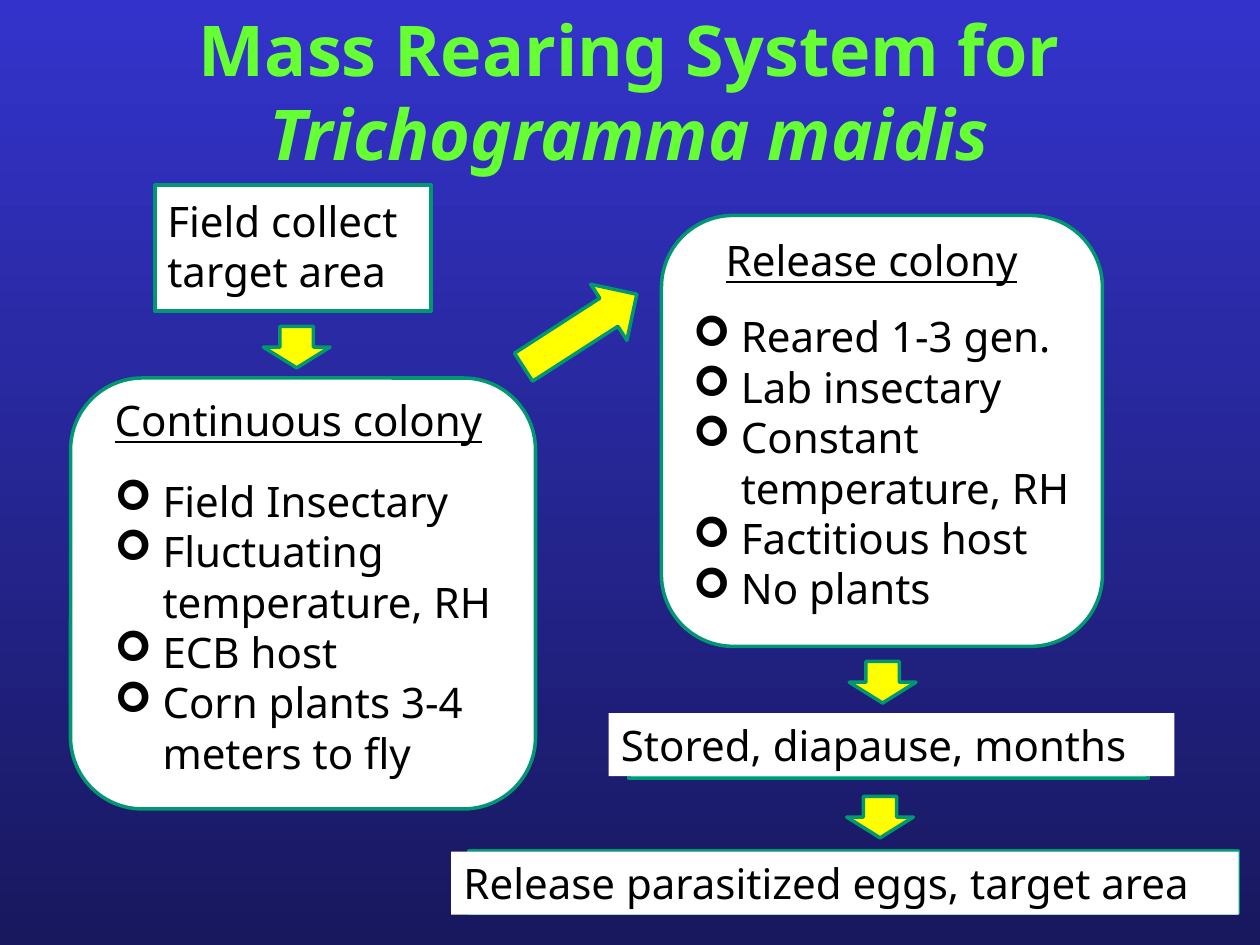
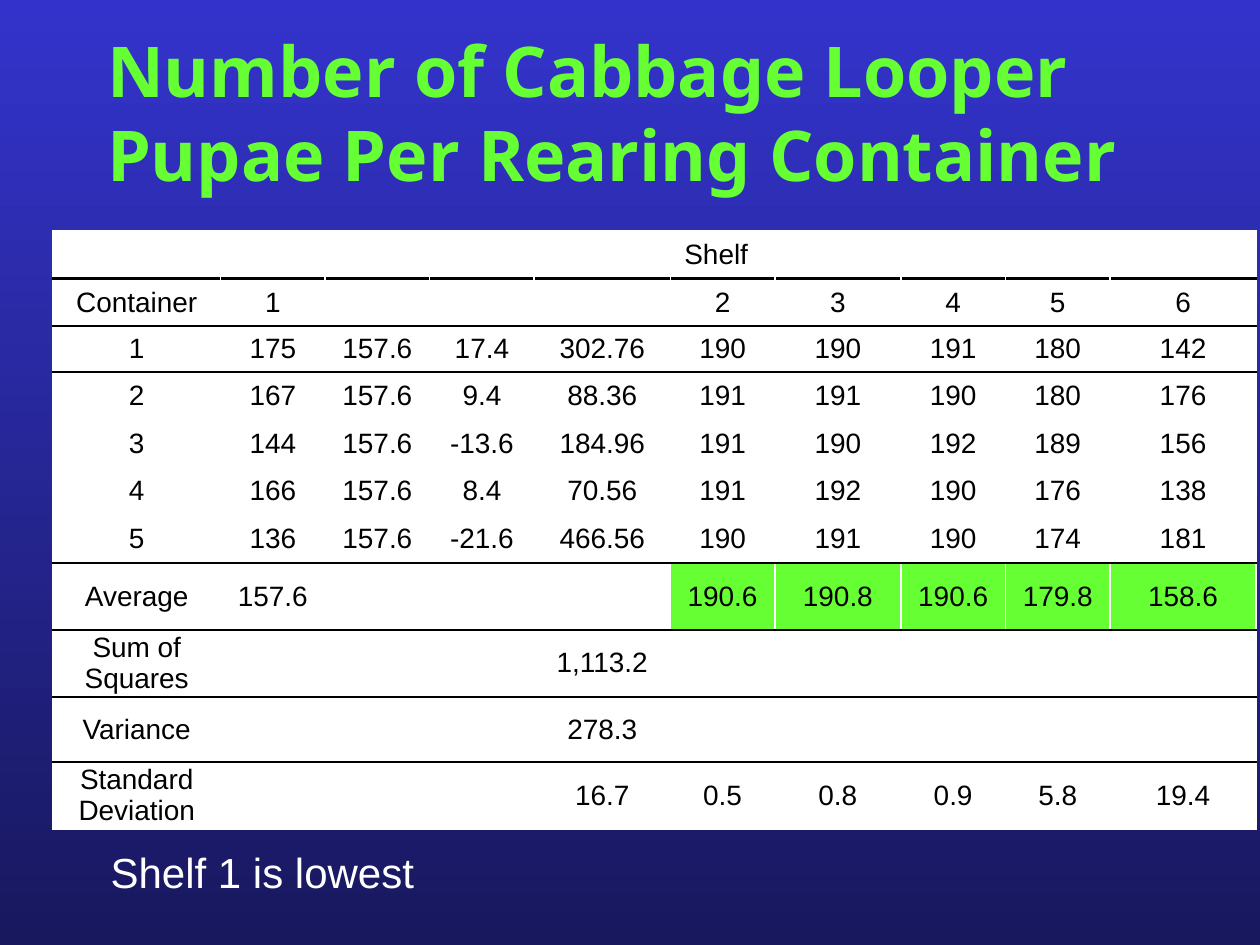
"""Build two slides on mass rearing of insects for biological control."""
from dataclasses import dataclass

from lxml import etree
from pptx import Presentation
from pptx import util as u
from pptx.dml.color import RGBColor
from pptx.enum import shapes, text
from pptx.oxml.ns import qn


@dataclass(frozen=True)
class Theme:
    """Colours, fonts and type sizes shared by the slides."""
    sky: str = "3333CC"
    night: str = "18185E"
    lime: str = "66FF33"
    white: str = "FFFFFF"
    black: str = "000000"
    yellow: str = "FFFF00"
    teal: str = "00CC99"
    outline: str = "009771"
    display: str = "Noto Sans"
    plain: str = "Arial"
    title_size: int = 40
    body_size: int = 24
    table_size: int = 16
    leading: float = 1.2


THEME = Theme()
SHAPE = shapes.MSO_SHAPE
ALIGN = text.PP_ALIGN

COLUMN_WIDTHS = [1.33, 0.83, 0.83, 0.83, 1.08, 0.83, 1, 0.83, 0.83, 0.83]
ROW_HEIGHTS = [0.38, 0.38, 0.36] + [0.38] * 4 + [0.53, 0.53, 0.52, 0.53]
RULED_ROWS = {0, 1, 2, 6, 7, 8, 9}
AVERAGE_ROW, FIRST_UPPER_SHELF = 7, 5
SHELF_ROWS = [
    ["Shelf"] + [""] * 9,
    ["Container", "1", "", "", "", "2", "3", "4", "5", "6"],
    ["1", "175", "157.6", "17.4", "302.76", "190", "190", "191", "180", "142"],
    ["2", "167", "157.6", "9.4", "88.36", "191", "191", "190", "180", "176"],
    ["3", "144", "157.6", "-13.6", "184.96", "191", "190", "192", "189", "156"],
    ["4", "166", "157.6", "8.4", "70.56", "191", "192", "190", "176", "138"],
    ["5", "136", "157.6", "-21.6", "466.56", "190", "191", "190", "174", "181"],
    ["Average", "157.6", "", "", "", "190.6", "190.8", "190.6", "179.8", "158.6"],
    ["Sum of Squares", "", "", "", "1,113.2", "", "", "", "", ""],
    ["Variance", "", "", "", "278.3", "", "", "", "", ""],
    ["Standard Deviation", "", "", "", "16.7", "0.5", "0.8", "0.9", "5.8", "19.4"],
]


def rgb(colour):
    """Turn a hex string into a colour."""
    return RGBColor.from_string(colour)


def place(item, box):
    """Move and size an item to left, top, width, height in inches."""
    item.left, item.top, item.width, item.height = map(u.Inches, box)


def style_runs(paragraph, size, colour, font=THEME.display, **flags):
    """Format every run of a paragraph."""
    for run in paragraph.runs:
        run.font.size = u.Pt(size)
        run.font.name = font
        run.font.color.rgb = rgb(colour)
        for flag, value in flags.items():
            setattr(run.font, flag, value)


def set_leading(paragraph, size):
    """Give a paragraph a fixed line pitch in proportion to its type."""
    paragraph.line_spacing = u.Pt(size * THEME.leading)


def prepare_frame(frame):
    """Make a text frame wrap from its top without resizing."""
    frame.word_wrap = True
    frame.auto_size = text.MSO_AUTO_SIZE.NONE
    frame.vertical_anchor = text.MSO_ANCHOR.TOP


def paint_background(master):
    """Fill the master with the vertical blue gradient."""
    fill = master.background.fill
    fill.gradient()
    fill.gradient_angle = 270
    for stop, colour in zip(fill.gradient_stops, (THEME.sky, THEME.night)):
        stop.color.rgb = rgb(colour)


def set_title(slide, box, wording, align, species=""):
    """Write the slide title, with an optional species name in italics."""
    title = slide.shapes.title
    place(title, box)
    prepare_frame(title.text_frame)
    heading = title.text_frame.paragraphs[0]
    heading.text = wording
    heading.alignment = align
    if species:
        heading.add_run().text = species
    set_leading(heading, THEME.title_size)
    style_runs(heading, THEME.title_size, THEME.lime, bold=True)
    if species:
        heading.runs[-1].font.italic = True


def add_block(slide, kind, box, fill, outlined=True, rotation=0):
    """Draw a preset shape with a flat fill."""
    block = slide.shapes.add_shape(kind, *map(u.Inches, box))
    block.shadow.inherit = False
    block.rotation = rotation
    block.fill.solid()
    block.fill.fore_color.rgb = rgb(fill)
    if outlined:
        block.line.color.rgb = rgb(THEME.outline)
        block.line.width = u.Pt(2)
    else:
        block.line.fill.background()
    return block


def write_label(label, wording, colour=THEME.black, font=THEME.display):
    """Write left-aligned body text in a shape or text box."""
    prepare_frame(label.text_frame)
    line = label.text_frame.paragraphs[0]
    line.text = wording
    line.alignment = ALIGN.LEFT
    set_leading(line, THEME.body_size)
    style_runs(line, THEME.body_size, colour, font)


def add_text(slide, box, wording, **style):
    """Add a text box holding one label."""
    write_label(slide.shapes.add_textbox(*map(u.Inches, box)), wording, **style)


def add_banner(slide, frame_box, label_box, wording):
    """Add a white label over an outlined frame."""
    add_block(slide, SHAPE.RECTANGLE, frame_box, THEME.teal)
    write_label(add_block(slide, SHAPE.RECTANGLE, label_box, THEME.white, outlined=False), wording)


def set_marker(paragraph, indent, hanging=0, marker=""):
    """Set the indent of a paragraph and its bullet, if any."""
    properties = paragraph._p.get_or_add_pPr()
    properties.set("marL", str(u.Inches(indent)))
    properties.set("indent", str(-u.Inches(hanging)))
    if marker:
        etree.SubElement(properties, qn("a:buFont"), typeface="Wingdings")
        etree.SubElement(properties, qn("a:buChar"), char=marker)
    else:
        etree.SubElement(properties, qn("a:buNone"))


def add_colony(slide, body, panel_box, body_box, heading, traits, gap, heading_indent=0):
    """Draw a rounded panel and list the traits of a colony on it."""
    add_block(slide, SHAPE.ROUNDED_RECTANGLE, panel_box, THEME.white)
    body.element.getparent().append(body.element)
    place(body, body_box)
    frame = body.text_frame
    prepare_frame(frame)
    frame.text = "\n".join([heading] + traits)
    for number, line in enumerate(frame.paragraphs):
        if number:
            set_marker(line, 0.38, 0.38, "➢")
        else:
            set_marker(line, heading_indent)
        line.space_before = u.Pt(gap if number == 1 else 0)
        set_leading(line, THEME.body_size)
        style_runs(line, THEME.body_size, THEME.black, underline=number == 0)


def set_borders(cell, top, bottom):
    """Draw white sides and the given top and bottom cell borders."""
    properties = cell._tc.get_or_add_tcPr()
    sides = {"L": THEME.white, "R": THEME.white, "T": top, "B": bottom}
    for order, (side, colour) in enumerate(sides.items()):
        width = u.Pt(1.5 if colour == THEME.black else 1)
        border = etree.Element(qn(f"a:ln{side}"), w=str(width))
        fill = etree.SubElement(border, qn("a:solidFill"))
        etree.SubElement(fill, qn("a:srgbClr"), val=colour)
        properties.insert(order, border)


def rule_colour(row):
    """Return the colour of the line under a row."""
    return THEME.black if row in RULED_ROWS else THEME.white


def fill_cell(cell, wording, row, column):
    """Write and format one cell of the shelf table."""
    cell.text = wording
    cell.vertical_anchor = text.MSO_ANCHOR.MIDDLE
    cell.margin_left = cell.margin_right = u.Inches(0.07)
    cell.margin_top = cell.margin_bottom = 0
    entry = cell.text_frame.paragraphs[0]
    entry.alignment = ALIGN.CENTER
    style_runs(entry, THEME.table_size, THEME.black, THEME.plain)
    highlighted = row == AVERAGE_ROW and column >= FIRST_UPPER_SHELF
    cell.fill.solid()
    cell.fill.fore_color.rgb = rgb(THEME.lime if highlighted else THEME.white)
    set_borders(cell, rule_colour(row - 1), rule_colour(row))


def add_shelf_table(slide):
    """Add the table of pupae per container and shelf."""
    frame = slide.shapes.add_table(len(ROW_HEIGHTS), len(COLUMN_WIDTHS),
                                   *map(u.Inches, (0.42, 1.83, 9.25, 4.74)))
    shelves = frame.table
    shelves.first_row = shelves.horz_banding = False
    for column, width in zip(shelves.columns, COLUMN_WIDTHS):
        column.width = u.Inches(width)
    for row, height in zip(shelves.rows, ROW_HEIGHTS):
        row.height = u.Inches(height)
    for row, entries in enumerate(SHELF_ROWS):
        for column, wording in enumerate(entries):
            fill_cell(shelves.cell(row, column), wording, row, column)
    spanner = shelves.cell(0, 0)
    spanner.merge(shelves.cell(0, len(COLUMN_WIDTHS) - 1))
    spanner.margin_left = u.Inches(1.05)


def build_rearing_slide(deck):
    """Build the flow from field collection to release."""
    slide = deck.slides.add_slide(deck.slide_layouts[3])
    continuous, release = slide.placeholders[1], slide.placeholders[2]
    set_title(slide, (0.83, 0, 8.33, 1.45), "Mass Rearing System for ",
              ALIGN.CENTER, "Trichogramma maidis")
    add_block(slide, SHAPE.RECTANGLE, (1.23, 1.47, 2.19, 1), THEME.white)
    add_text(slide, (1.23, 1.5, 2.25, 0.91), "Field collect target area")
    add_colony(slide, continuous, (0.56, 3, 3.69, 3.42), (0.81, 3.08, 3.36, 3.18),
               "Continuous colony",
               ["Field Insectary", "Fluctuating temperature, RH", "ECB host",
                "Corn plants 3-4 meters to fly"], gap=17.5)
    add_colony(slide, release, (5.25, 1.71, 3.5, 3.42), (5.4, 1.81, 3.3, 3.14),
               "Release colony",
               ["Reared 1-3 gen.", "Lab insectary", "Constant temperature, RH",
                "Factitious host", "No plants"], gap=15, heading_indent=0.26)
    add_banner(slide, (4.99, 5.68, 4.12, 0.5), (4.83, 5.66, 4.49, 0.5),
               "Stored, diapause, months")
    add_banner(slide, (3.72, 6.75, 6.11, 0.5), (3.58, 6.76, 6.25, 0.5),
               "Release parasitized eggs, target area")
    for left, top in ((2.09, 2.59), (6.72, 6.32), (6.74, 5.25)):
        add_block(slide, SHAPE.DOWN_ARROW, (left, top, 0.53, 0.33), THEME.yellow)
    add_block(slide, SHAPE.RIGHT_ARROW, (4.07, 2.36, 1.07, 0.53), THEME.yellow, rotation=327.2)


def build_pupae_slide(deck):
    """Build the table slide of pupae counts."""
    slide = deck.slides.add_slide(deck.slide_layouts[5])
    set_title(slide, (0.75, 0.17, 8.42, 1.45),
              "Number of Cabbage Looper Pupae Per Rearing Container", ALIGN.LEFT)
    add_shelf_table(slide)
    add_text(slide, (0.78, 6.67, 2.83, 0.51), "Shelf 1 is lowest",
             colour=THEME.white, font=THEME.plain)


def main():
    """Build and save the deck."""
    deck = Presentation()
    deck.slide_width, deck.slide_height = u.Inches(10), u.Inches(7.5)
    paint_background(deck.slide_master)
    build_rearing_slide(deck)
    build_pupae_slide(deck)
    deck.save("out.pptx")


if __name__ == "__main__":
    main()
